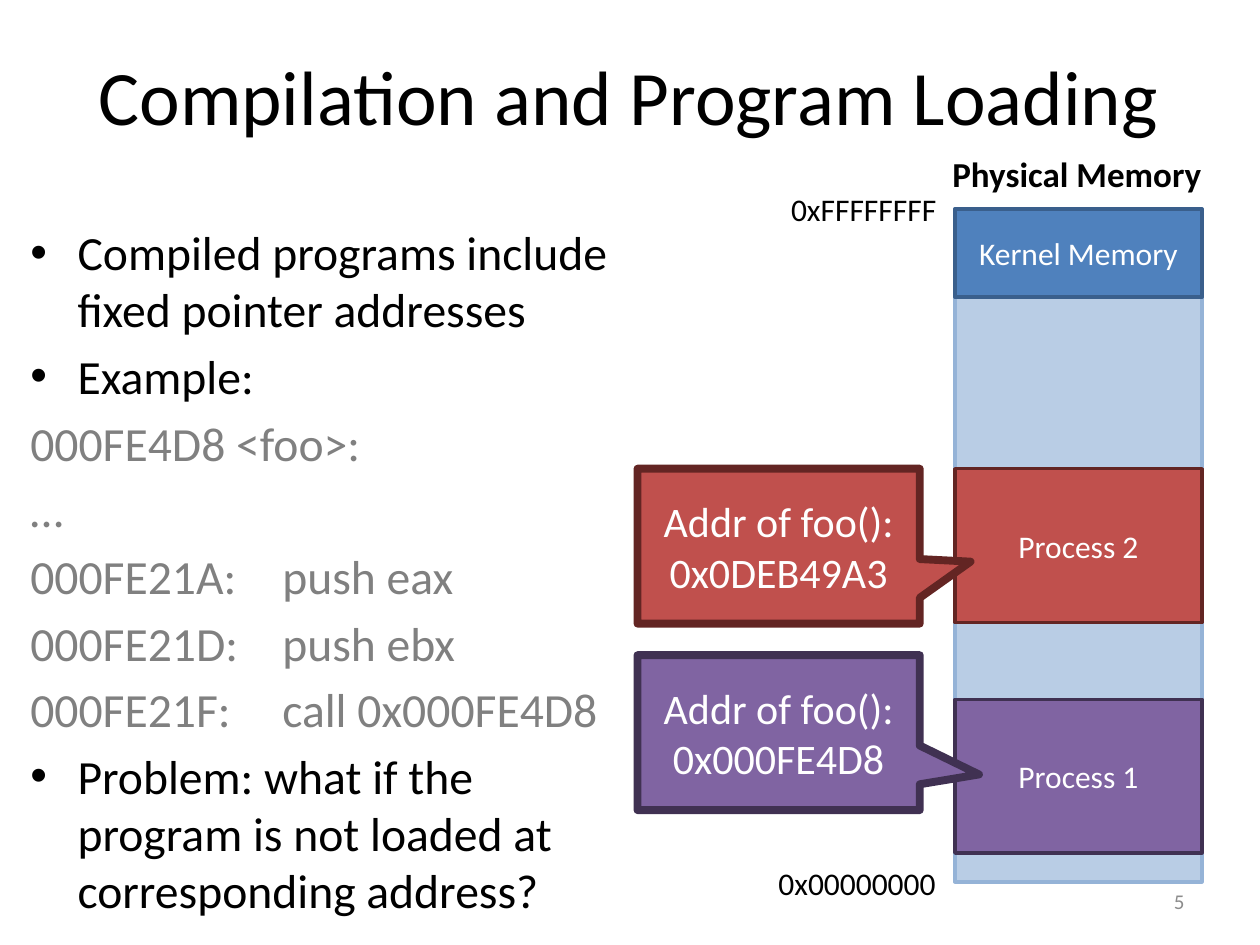
"""Build the slide on compilation and program loading."""
from lxml import etree
from pptx import Presentation
from pptx.dml.color import RGBColor
from pptx.enum import shapes, text
from pptx.oxml import ns
from pptx.util import Inches, Pt

BLACK, WHITE, GRAY = "000000", "FFFFFF", "808080"
RED, PURPLE = ("C0504D", "632523"), ("8064A2", "403152")
MEMORY_LEFT, MEMORY_WIDTH = 7.58, 1.96
CALLOUT_LEFT, CALLOUT_WIDTH = 5.06, 2.24


def color(hex_code):
    return RGBColor.from_string(hex_code)


class SlideBuilder:
    def __init__(self, slide, font="Calibri"):
        self.slide = slide
        self.font = font

    def place(self, item, box):
        item.left, item.top, item.width, item.height = map(Inches, box)

    def style(self, paragraph, size, hue, align=None, bold=False):
        paragraph.alignment = align
        paragraph.font.name = self.font
        paragraph.font.size = Pt(size)
        paragraph.font.bold = bold
        paragraph.font.color.rgb = color(hue)

    def title(self, wording, box):
        heading = self.slide.shapes.title
        self.place(heading, box)
        heading.text_frame.text = wording
        self.style(heading.text_frame.paragraphs[0], 44, BLACK, text.PP_ALIGN.CENTER)

    def body(self, lines, box):
        points = self.slide.placeholders[1]
        self.place(points, box)
        frame = points.text_frame
        frame.text = "\n".join(wording for wording, _ in lines)
        frame.auto_size = text.MSO_AUTO_SIZE.NONE
        for paragraph, (_, is_code) in zip(frame.paragraphs, lines):
            self.style(paragraph, 27.2, GRAY if is_code else BLACK)
            if is_code:
                properties = paragraph._p.get_or_add_pPr()
                properties.set("marL", "0")
                properties.set("indent", "0")
                bullet = etree.Element(ns.qn("a:buNone"))
                properties.insert_element_before(bullet, "a:tabLst", "a:defRPr", "a:extLst")

    def label(self, wording, box, size=18, hue=BLACK, align=text.PP_ALIGN.LEFT,
              bold=False, anchor=text.MSO_ANCHOR.TOP):
        frame = self.slide.shapes.add_textbox(*map(Inches, box)).text_frame
        frame.text = wording
        frame.word_wrap = False
        frame.vertical_anchor = anchor
        self.style(frame.paragraphs[0], size, hue, align, bold)

    def block(self, kind, box, colors, wording="", size=18, line_width=2):
        fill, outline = colors
        block = self.slide.shapes.add_shape(kind, *map(Inches, box))
        block.shadow.inherit = False
        block.fill.solid()
        block.fill.fore_color.rgb = color(fill)
        block.line.color.rgb = color(outline)
        block.line.width = Pt(line_width)
        if wording:
            frame = block.text_frame
            frame.text = wording
            frame.word_wrap = True
            frame.vertical_anchor = text.MSO_ANCHOR.MIDDLE
            self.style(frame.paragraphs[0], size, WHITE, text.PP_ALIGN.CENTER)
        return block

    def memory(self, top, height, colors, wording=""):
        self.block(shapes.MSO_SHAPE.RECTANGLE,
                   (MEMORY_LEFT, top, MEMORY_WIDTH, height), colors, wording)

    def callout(self, top, colors, address, pointer):
        bubble = self.block(shapes.MSO_SHAPE.RECTANGULAR_CALLOUT,
                            (CALLOUT_LEFT, top, CALLOUT_WIDTH, 1.23), colors,
                            f"Addr of foo(): {address}", size=24, line_width=4.5)
        for index, offset in enumerate(pointer):
            bubble.adjustments[index] = offset


def main():
    deck = Presentation()
    deck.slide_width, deck.slide_height = Inches(10), Inches(7.5)
    builder = SlideBuilder(deck.slides.add_slide(deck.slide_layouts[1]))

    builder.title("Compilation and Program Loading", (0.49, 0.13, 9, 1.25))
    builder.body([
        ("Compiled programs include fixed pointer addresses", False),
        ("Example:", False),
        ("000FE4D8 <foo>:", True),
        ("…", True),
        ("000FE21A:\tpush eax", True),
        ("000FE21D:\tpush ebx", True),
        ("000FE21F:\tcall 0x000FE4D8", True),
        ("Problem: what if the program is not loaded at corresponding address?", False),
    ], (0.14, 1.72, 4.93, 5.56))
    builder.label("5", (7.17, 6.95, 2.33, 0.4), 12, "8C8C8C",
                  text.PP_ALIGN.RIGHT, anchor=text.MSO_ANCHOR.MIDDLE)

    builder.memory(1.66, 5.34, ("B9CDE5", "95B3D7"))
    builder.label("0x00000000", (6.08, 6.81, 1.46, 0.4))
    builder.label("0xFFFFFFFF", (6.18, 1.46, 1.36, 0.4))
    builder.label("Physical Memory", (7.46, 1.16, 2.2, 0.44), 20, bold=True)
    builder.memory(1.66, 0.7, ("4F81BD", "3A5F8C"), "Kernel Memory")
    builder.memory(5.55, 1.22, PURPLE, "Process 1")
    builder.memory(3.72, 1.22, RED, "Process 2")
    builder.callout(5.2, PURPLE, "0x000FE4D8", (0.71, 0.27))
    builder.callout(3.72, RED, "0x0DEB49A3", (0.68, 0.1))

    deck.save("out.pptx")


if __name__ == "__main__":
    main()
